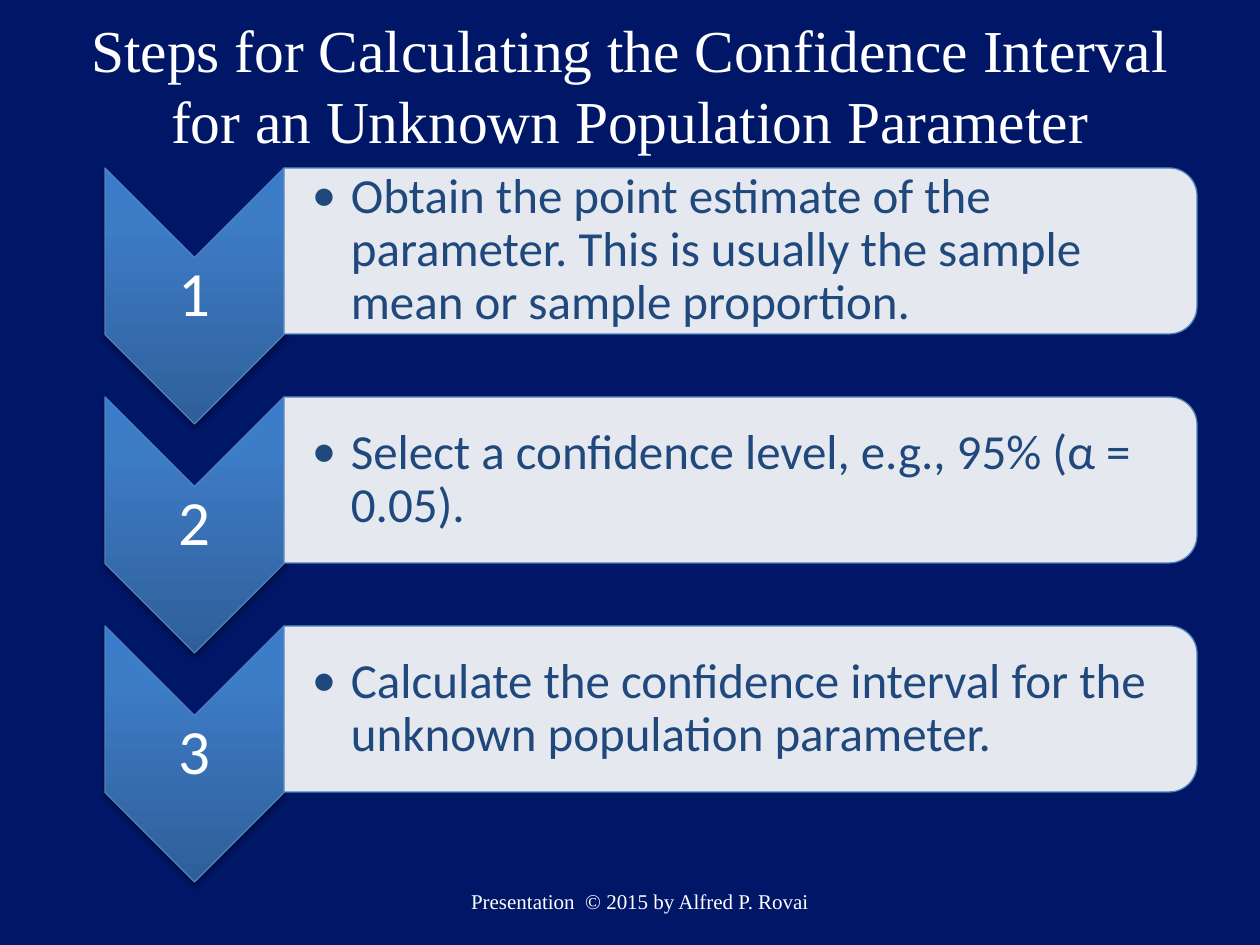
from typing import NamedTuple

from lxml.etree import SubElement
from pptx import Presentation
from pptx.dml.color import RGBColor
from pptx.enum.shapes import MSO_SHAPE as Preset
from pptx.enum.text import MSO_ANCHOR as Anchor, MSO_AUTO_SIZE as AutoSize, PP_ALIGN as Align
from pptx.oxml.ns import qn
from pptx.util import Emu, Pt

PX_PER_INCH = 126
NAVY = RGBColor(0x00, 0x16, 0x67)
WHITE = RGBColor(0xFF, 0xFF, 0xFF)
INK = RGBColor(0x1F, 0x49, 0x7D)
EDGE = RGBColor(0x4F, 0x81, 0xBD)
BLACK = RGBColor(0x00, 0x00, 0x00)
CHEVRON_STOPS = (
    (0, RGBColor(0x2F, 0x5F, 0x99)),
    (80, RGBColor(0x3D, 0x7C, 0xC7)),
    (100, RGBColor(0x3A, 0x7C, 0xCB)),
)
SERIF, SANS = "Times New Roman", "Calibri"


class Box(NamedTuple):
    left: int
    top: int
    width: int
    height: int

    def down(self, distance: int) -> "Box":
        return self._replace(top=self.top + distance)


class TextStyle(NamedTuple):
    font: str
    size: int
    color: RGBColor
    align: Align = Align.CENTER
    line_spacing: float = 1.0


TITLE = TextStyle(SERIF, 34, WHITE)
FOOTER = TextStyle(SERIF, 12, WHITE)
NUMBER = TextStyle(SANS, 36, WHITE, line_spacing=0.9)
STEP = TextStyle(SANS, 28, INK, Align.LEFT, 0.9)

CHEVRON_BOX = Box(105, 168, 179, 256)
PANEL_BOX = Box(284, 168, 913, 166)
NUMBER_BOX = Box(105, 258, 179, 77)
STEP_BOX = Box(284, 176, 905, 150)
STEP_PITCH = 229
STEPS = (
    "Obtain the point estimate of the parameter. This is usually the sample mean or sample proportion.",
    "Select a confidence level, e.g., 95% (α = 0.05).",
    "Calculate the confidence interval for the unknown population parameter.",
)


def px(length: float) -> Emu:
    return Emu(round(length * 914400 / PX_PER_INCH))


def write(frame, text: str, style: TextStyle):
    frame.word_wrap = True
    frame.auto_size = AutoSize.NONE
    frame.vertical_anchor = Anchor.MIDDLE
    paragraph = frame.paragraphs[0]
    paragraph.alignment = style.align
    paragraph.line_spacing = style.line_spacing
    run = paragraph.add_run()
    run.text = text
    run.font.name, run.font.size = style.font, Pt(style.size)
    run.font.color.rgb = style.color
    return paragraph


def add_text(slide, box: Box, text: str, style: TextStyle, insets=(13, 6, 13, 6)):
    """Insets run left, top, right, bottom."""
    frame = slide.shapes.add_textbox(*map(px, box)).text_frame
    (frame.margin_left, frame.margin_top,
     frame.margin_right, frame.margin_bottom) = map(px, insets)
    return write(frame, text, style)


def add_bullet(paragraph, indent: int) -> None:
    properties = paragraph._p.get_or_add_pPr()
    properties.set("marL", str(px(indent)))
    properties.set("indent", str(-px(indent)))
    SubElement(properties, qn("a:buFont")).set("typeface", SANS)
    SubElement(properties, qn("a:buChar")).set("char", "•")


def add_turned(slide, preset: Preset, box: Box):
    """Add a preset turned 90 degrees so that it covers the box."""
    left = box.left + (box.width - box.height) / 2
    top = box.top + (box.height - box.width) / 2
    shape = slide.shapes.add_shape(
        preset, px(left), px(top), px(box.height), px(box.width))
    shape.rotation = 90
    shape.shadow.inherit = False
    shape.line.color.rgb = EDGE
    shape.line.width = Pt(0.75)
    return shape


def add_color(parent, color: RGBColor):
    element = SubElement(parent, qn("a:srgbClr"))
    element.set("val", str(color))
    return element


def add_chevron(slide, box: Box) -> None:
    chevron = add_turned(slide, Preset.CHEVRON, box)
    chevron.fill.gradient()
    chevron.fill.gradient_angle = 90
    properties = chevron._element.spPr
    gradient = properties.find(qn("a:gradFill"))
    gradient.set("rotWithShape", "0")
    stops = gradient.find(qn("a:gsLst"))
    for old_stop in list(stops):
        stops.remove(old_stop)
    for percent, color in CHEVRON_STOPS:
        stop = SubElement(stops, qn("a:gs"))
        stop.set("pos", str(percent * 1000))
        add_color(stop, color)
    shadow = SubElement(properties.find(qn("a:effectLst")), qn("a:outerShdw"))
    for name, value in (("blurRad", Pt(3.1)), ("dist", Pt(1.8)),
                        ("dir", 90 * 60000), ("rotWithShape", 0)):
        shadow.set(name, str(int(value)))
    SubElement(add_color(shadow, BLACK), qn("a:alpha")).set("val", "35000")


def add_panel(slide, box: Box) -> None:
    panel = add_turned(slide, Preset.ROUND_2_SAME_RECTANGLE, box)
    panel.fill.solid()
    panel.fill.fore_color.rgb = WHITE
    color = panel._element.spPr.find(qn("a:solidFill")).find(qn("a:srgbClr"))
    SubElement(color, qn("a:alpha")).set("val", "90000")


def add_step(slide, index: int, text: str) -> None:
    drop = index * STEP_PITCH
    add_chevron(slide, CHEVRON_BOX.down(drop))
    add_text(slide, NUMBER_BOX.down(drop), str(index + 1), NUMBER, (4, 4, 4, 4))
    add_panel(slide, PANEL_BOX.down(drop))
    add_bullet(add_text(slide, STEP_BOX.down(drop), text, STEP, (28, 2, 2, 2)), 39)


def main() -> None:
    deck = Presentation()
    deck.slide_width, deck.slide_height = px(1260), px(945)
    slide = deck.slides.add_slide(deck.slide_layouts[5])
    slide.background.fill.solid()
    slide.background.fill.fore_color.rgb = NAVY

    title = slide.shapes.title
    title.left, title.top, title.width, title.height = map(px, Box(63, 0, 1134, 168))
    write(title.text_frame,
          "Steps for Calculating the Confidence Interval for an Unknown Population Parameter",
          TITLE)
    for index, text in enumerate(STEPS):
        add_step(slide, index, text)
    add_text(slide, Box(220, 876, 840, 50), "Presentation  © 2015 by Alfred P. Rovai", FOOTER)
    deck.save("out.pptx")


if __name__ == "__main__":
    main()
